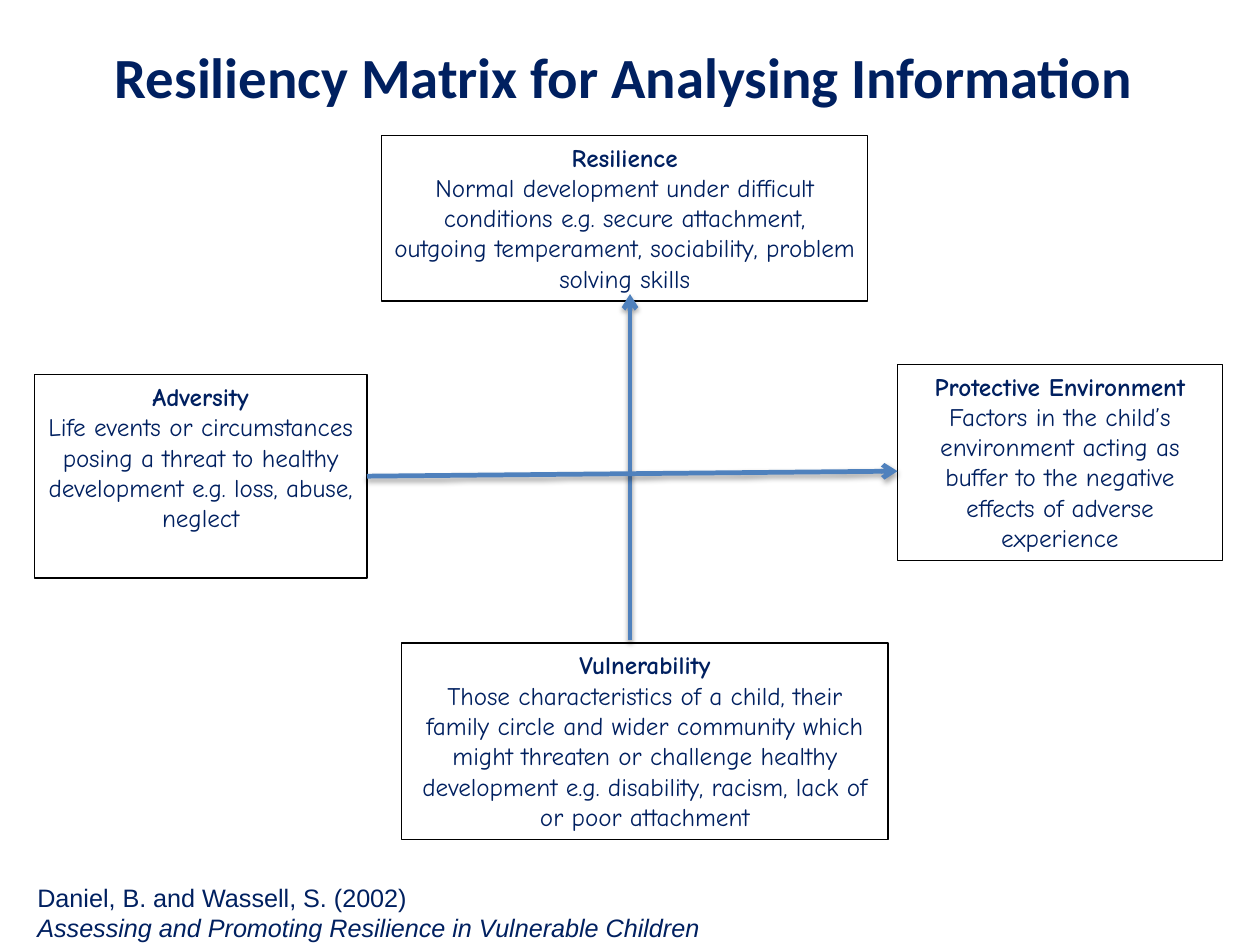
from lxml import etree
from pptx import Presentation
from pptx import util as u
from pptx.dml.color import RGBColor
from pptx.enum import shapes, text
from pptx.oxml.ns import qn

COLOURS = {"navy": "002060", "blue": "4F81BD", "black": "000000", "white": "FFFFFF"}


class MatrixSlide:
    """Draws the matrix elements on one slide in a shared style."""

    def __init__(self, slide):
        self.slide = slide

    def colour(self, name):
        return RGBColor.from_string(COLOURS[name])

    def set_lines(self, frame, lines, font, size, align, after=0, wrap=True, grow=True,
                  anchor=text.MSO_ANCHOR.TOP):
        frame.word_wrap = wrap
        frame.auto_size = (text.MSO_AUTO_SIZE.SHAPE_TO_FIT_TEXT if grow
                           else text.MSO_AUTO_SIZE.NONE)
        frame.vertical_anchor = anchor
        frame.margin_left = frame.margin_right = u.Pt(7.9)
        frame.margin_top = frame.margin_bottom = u.Pt(4.3)
        paragraph = frame.paragraphs[0]
        paragraph.alignment = align
        paragraph.space_before, paragraph.space_after = u.Pt(0), u.Pt(after)
        for index, (words, bold, italic) in enumerate(lines):
            if index:
                paragraph.add_line_break()
            run = paragraph.add_run()
            run.text = words
            run.font.name, run.font.size = font, u.Pt(size)
            run.font.bold, run.font.italic = bold, italic
            run.font.color.rgb = self.colour("navy")

    def title(self, words, left, top, width, height):
        heading = self.slide.shapes.title
        heading.left, heading.top = u.Pt(left), u.Pt(top)
        heading.width, heading.height = u.Pt(width), u.Pt(height)
        self.set_lines(heading.text_frame, [(words, True, False)], "Calibri", 36,
                       text.PP_ALIGN.CENTER, wrap=False, anchor=text.MSO_ANCHOR.MIDDLE)

    def factor(self, name, meaning, left, top, width, height, grow=True):
        box = self.slide.shapes.add_shape(
            shapes.MSO_SHAPE.RECTANGLE, u.Pt(left), u.Pt(top), u.Pt(width), u.Pt(height))
        box.shadow.inherit = False
        box.fill.solid()
        box.fill.fore_color.rgb = self.colour("white")
        box.line.color.rgb = self.colour("black")
        box.line.width = u.Pt(0.75)
        self.set_lines(box.text_frame, [(name, True, False), (meaning, False, False)],
                       "Comic Neue", 16, text.PP_ALIGN.CENTER, after=11.1, grow=grow)

    def axis(self, *ends):
        arrow = self.slide.shapes.add_connector(
            shapes.MSO_CONNECTOR.STRAIGHT, *[u.Pt(end) for end in ends])
        arrow.line.color.rgb = self.colour("blue")
        arrow.line.width = u.Pt(3)
        properties = arrow.element.spPr
        etree.SubElement(properties.find(qn("a:ln")), qn("a:tailEnd"), type="arrow")
        effects = etree.SubElement(properties, qn("a:effectLst"))
        shadow = etree.SubElement(
            effects, qn("a:outerShdw"), blurRad=str(u.Pt(3.1)), dist=str(u.Pt(1.8)),
            dir="5400000", rotWithShape="0")
        tint = etree.SubElement(shadow, qn("a:srgbClr"), val=COLOURS["black"])
        etree.SubElement(tint, qn("a:alpha"), val="35000")

    def citation(self, authors, work, left, top, width, height):
        source = self.slide.shapes.add_textbox(
            u.Pt(left), u.Pt(top), u.Pt(width), u.Pt(height))
        self.set_lines(source.text_frame, [(authors, False, False), (work, False, True)],
                       "Arial", 16, text.PP_ALIGN.LEFT)


def main():
    deck = Presentation()
    deck.slide_width, deck.slide_height = u.Pt(799.2), u.Pt(601.2)
    matrix = MatrixSlide(deck.slides.add_slide(deck.slide_layouts[5]))
    matrix.title("Resiliency Matrix for Analysing Information", 61.2, 22.3, 669, 51.8)
    matrix.factor("Resilience",
                  "Normal development under difficult conditions e.g. secure attachment, "
                  "outgoing temperament, sociability, problem solving skills",
                  242, 85.7, 308.5, 105.2)
    matrix.factor("Adversity",
                  "Life events or circumstances posing a threat to healthy development "
                  "e.g. loss, abuse, neglect",
                  21.8, 237.6, 211, 129, grow=False)
    matrix.factor("Protective Environment",
                  "Factors in the child’s environment acting as buffer to the negative "
                  "effects of adverse experience",
                  569.3, 231, 206, 124.6)
    matrix.factor("Vulnerability",
                  "Those characteristics of a child, their family circle and wider community "
                  "which might threaten or challenge healthy development e.g. disability, "
                  "racism, lack of or poor attachment",
                  254.8, 407.8, 308.5, 124.6)
    matrix.axis(399.6, 406, 399.6, 186.5)
    matrix.axis(232.8, 302, 569.3, 298.8)
    matrix.citation("Daniel, B. and Wassell, S. (2002)",
                    "Assessing and Promoting Resilience in Vulnerable Children",
                    15.8, 555.1, 777, 46.1)
    deck.save("out.pptx")


if __name__ == "__main__":
    main()
